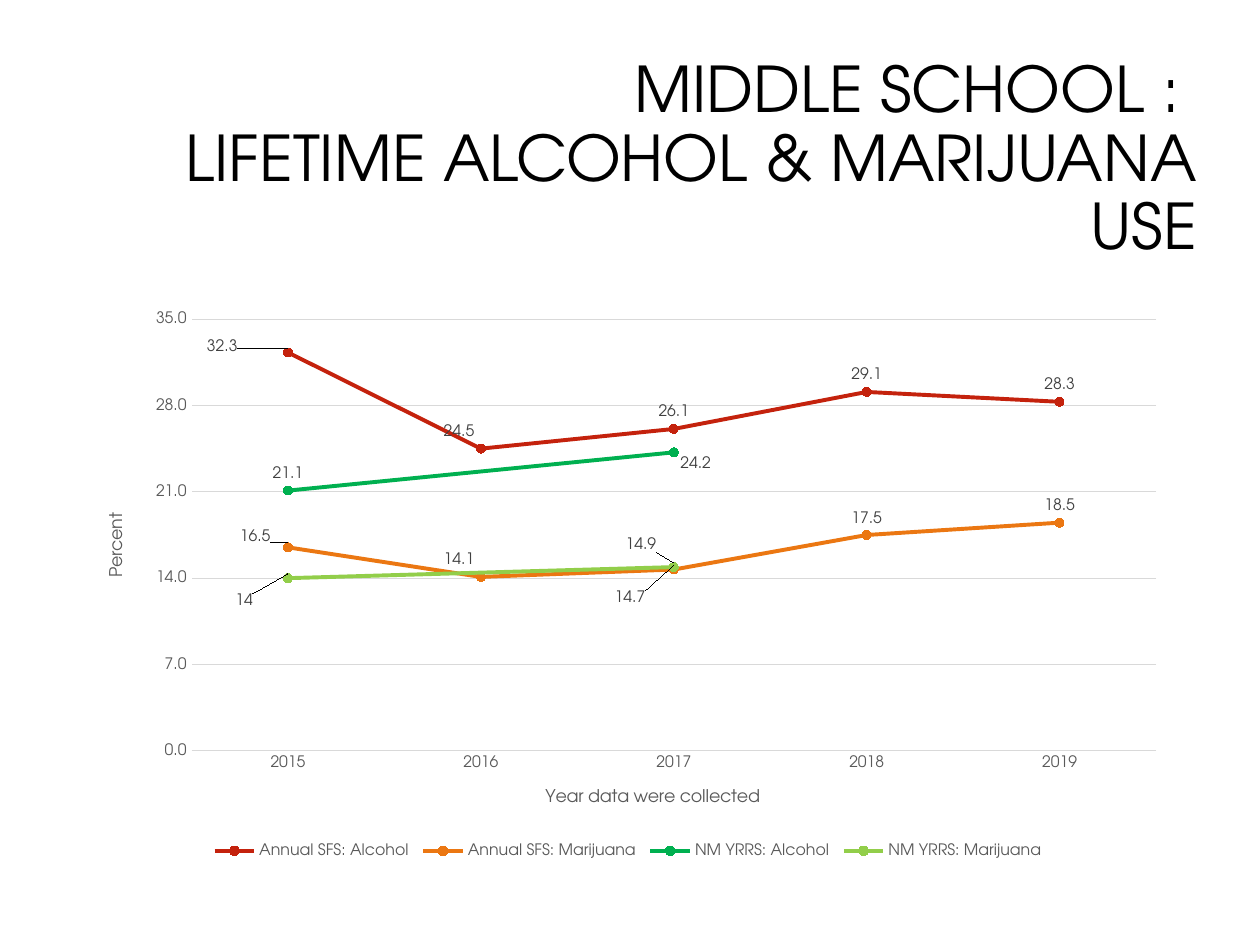
import pptx
import pptx.util
import pptx.oxml
import pptx.chart.data
import pptx.dml.color
import pptx.enum.chart
import pptx.enum.text

Inches, Pt = pptx.util.Inches, pptx.util.Pt
RGB = pptx.dml.color.RGBColor
ec = pptx.enum.chart

FONT = "TeX Gyre Adventor"
BLACK = RGB(0x00, 0x00, 0x00)
LABEL = RGB(0x40, 0x40, 0x40)
GREY = RGB(0x59, 0x59, 0x59)
GRID = RGB(0xD9, 0xD9, 0xD9)
RED = RGB(0xC4, 0x22, 0x0D)
ORANGE = RGB(0xEB, 0x77, 0x12)
GREEN = RGB(0x00, 0xB0, 0x50)
LIME = RGB(0x92, 0xCE, 0x4A)

TITLE = "MIDDLE SCHOOL : \vLIFETIME ALCOHOL & MARIJUANA USE"
YEARS = ["2015", "2016", "2017", "2018", "2019"]
SERIES = [
    ("Annual SFS: Alcohol ", [32.3, 24.5, 26.1, 29.1, 28.3], RED,
     {0: (-0.06, 0.02), 1: (-0.02, 0)}),
    ("Annual SFS: Marijuana ", [16.5, 14.1, 14.7, 17.5, 18.5], ORANGE,
     {0: (-0.03, 0.01), 1: (-0.02, 0), 2: (-0.04, 0.08)}),
    ("NM YRRS: Alcohol ", [21.1, None, 24.2, None, None], GREEN,
     {2: (0.02, 0.05)}),
    ("NM YRRS: Marijuana ", [14, None, 14.9, None, None], LIME,
     {0: (-0.04, 0.07), 2: (-0.03, -0.01)}),
]


def style(font, size, color):
    font.name, font.size, font.bold = FONT, Pt(size), False
    font.color.rgb = color


def layout(**parts):
    children = "".join(f'<c:{k} val="{v}"/>' for k, v in parts.items())
    ns = "http://schemas.openxmlformats.org/drawingml/2006/chart"
    return pptx.oxml.parse_xml(
        f'<c:layout xmlns:c="{ns}"><c:manualLayout>{children}</c:manualLayout></c:layout>')


def set_layout(parent, index, **parts):
    for old in parent.findall(pptx.oxml.ns.qn("c:layout")):
        parent.remove(old)
    parent.insert(index, layout(**parts))


def format_axis(axis, title, x, y):
    axis.major_tick_mark = axis.minor_tick_mark = ec.XL_TICK_MARK.NONE
    style(axis.tick_labels.font, 9, GREY)
    tf = axis.axis_title.text_frame
    tf.text = title
    style(tf.paragraphs[0].runs[0].font, 10, GREY)
    set_layout(axis.axis_title._element, 1, xMode="edge", yMode="edge", x=x, y=y)


def add_title(s):
    title = s.shapes.title
    title.left, title.top, title.width, title.height = map(Inches, (1.17, 0.42, 8.43, 1.71))
    tf = title.text_frame
    tf.text = TITLE
    tf.word_wrap = True
    tf.auto_size = pptx.enum.text.MSO_AUTO_SIZE.NONE
    tf.vertical_anchor = pptx.enum.text.MSO_ANCHOR.MIDDLE
    p = tf.paragraphs[0]
    p.alignment = pptx.enum.text.PP_ALIGN.RIGHT
    p.line_spacing = 0.9
    for r in p.runs:
        style(r.font, 36, BLACK)


def format_series(series, color, offsets):
    series.smooth = False
    series.format.line.color.rgb = color
    series.format.line.width = Pt(2.25)
    marker = series.marker
    marker.style, marker.size = ec.XL_MARKER_STYLE.CIRCLE, 5
    marker.format.fill.solid()
    marker.format.fill.fore_color.rgb = color
    marker.format.line.color.rgb = color
    labels = series.data_labels
    labels.show_value = True
    labels.position = ec.XL_LABEL_POSITION.ABOVE
    style(labels.font, 9, LABEL)
    for i, (x, y) in offsets.items():
        label = series.points[i].data_label
        style(label.font, 9, LABEL)
        label.position = ec.XL_LABEL_POSITION.ABOVE
        set_layout(labels._element.find(f"{{*}}dLbl[{{*}}idx]/{{*}}idx[@val='{i}']/.."), 1, x=x, y=y)


def add_chart(s):
    data = pptx.chart.data.CategoryChartData()
    data.categories = YEARS
    for name, values, *_ in SERIES:
        data.add_series(name, values)
    chart = s.shapes.add_chart(ec.XL_CHART_TYPE.LINE_MARKERS,
                               *map(Inches, (0.65, 2.4, 8.7, 4.45)), data).chart
    style(chart.font, 10, BLACK)
    chart.has_title = False
    chart.has_legend = True
    chart.legend.position = ec.XL_LEGEND_POSITION.BOTTOM
    chart.legend.include_in_layout = False
    style(chart.legend.font, 9, GREY)

    plot = chart.plots[0]
    plot.vary_by_categories = False
    for series, (_, _, color, offsets) in zip(plot.series, SERIES):
        format_series(series, color, offsets)

    years, percent = chart.category_axis, chart.value_axis
    format_axis(years, "Year data were collected", 0.42, 0.86)
    format_axis(percent, "Percent", 0.02, 0.37)
    years.format.line.color.rgb = GRID
    years.format.line.width = Pt(0.75)
    percent.format.line.fill.background()
    percent.minimum_scale, percent.maximum_scale, percent.major_unit = 0, 35, 7
    percent.tick_labels.number_format = "#,##0.0"
    percent.tick_labels.number_format_is_linked = False
    percent.major_gridlines.format.line.color.rgb = GRID
    percent.major_gridlines.format.line.width = Pt(0.75)

    root = chart._chartSpace.chart
    set_layout(root.plotArea, 0, layoutTarget="inner", xMode="edge", yMode="edge",
               x=0.1, y=0.03, w=0.88, h=0.77)
    root.find(pptx.oxml.ns.qn("c:dispBlanksAs")).set("val", "span")


def main():
    prs = pptx.Presentation()
    prs.slide_width, prs.slide_height = Inches(10), Inches(7.5)
    s = prs.slides.add_slide(prs.slide_layouts[5])
    add_title(s)
    add_chart(s)
    prs.save("out.pptx")


if __name__ == "__main__":
    main()
